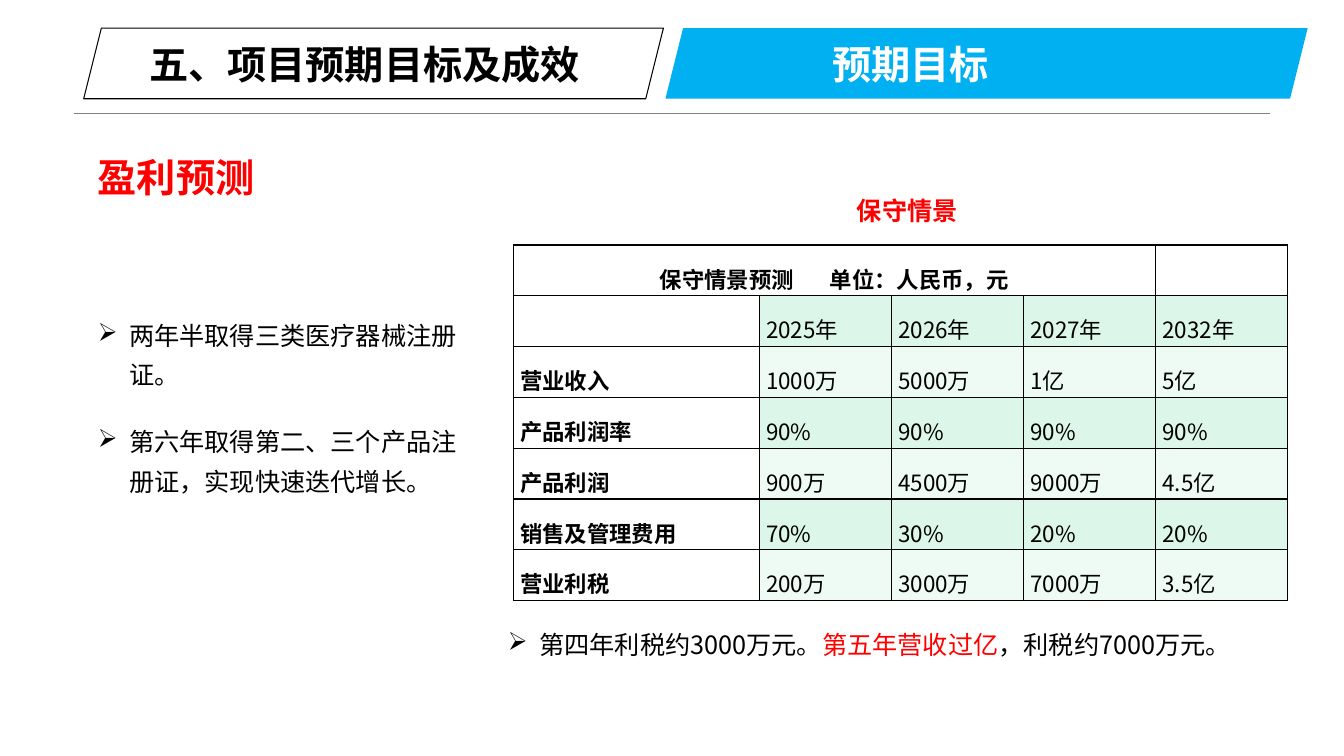
import pptx
import pptx.dml.color
import pptx.enum.shapes
import pptx.enum.text
import pptx.oxml
import pptx.oxml.ns
import pptx.util
from lxml import etree

RGBColor = pptx.dml.color.RGBColor
ALIGN = pptx.enum.text.PP_ALIGN
SHAPE = pptx.enum.shapes.MSO_SHAPE

BLACK = RGBColor(0x00, 0x00, 0x00)
WHITE = RGBColor(0xFF, 0xFF, 0xFF)
RED = RGBColor(0xFF, 0x00, 0x00)
BLUE = RGBColor(0x00, 0xB0, 0xF0)
GRAY = RGBColor(0x80, 0x80, 0x80)
MINT = RGBColor(0xDC, 0xF7, 0xE9)
PALE_MINT = RGBColor(0xEE, 0xFB, 0xF4)

PX = 9144
BODY_FONT = "Noto Sans CJK SC"
TABLE_FONT = "Noto Sans CJK JP"

FORECAST = [
    ("", "2025年", "2026年", "2027年", "2032年"),
    ("营业收入", "1000万", "5000万", "1亿", "5亿"),
    ("产品利润率", "90%", "90%", "90%", "90%"),
    ("产品利润", "900万", "4500万", "9000万", "4.5亿"),
    ("销售及管理费用", "70%", "30%", "20%", "20%"),
    ("营业利税", "200万", "3000万", "7000万", "3.5亿"),
]


def scaled(box):
    return [length * PX for length in box]


def add_run(para, text, size, color, bold=False, font=BODY_FONT):
    span = para.add_run()
    span.text = text
    span.font.size = pptx.util.Pt(size)
    span.font.bold = bold
    span.font.color.rgb = color
    span.font.name = font
    east_asian = etree.SubElement(span.font._element, pptx.oxml.ns.qn("a:ea"))
    east_asian.set("typeface", font)
    return span


def add_arrow_bullet(para):
    properties = para._p.get_or_add_pPr()
    properties.set("marL", str(31 * PX))
    properties.set("indent", str(-31 * PX))
    etree.SubElement(properties, pptx.oxml.ns.qn("a:buChar")).set("char", "➢")


def add_text_area(page, box, inset, wrap=True):
    frame = page.shapes.add_textbox(*scaled(box)).text_frame
    frame.margin_left = frame.margin_right = inset * PX
    frame.margin_top = frame.margin_bottom = 5 * PX
    frame.word_wrap = wrap
    frame.auto_size = pptx.enum.text.MSO_AUTO_SIZE.SHAPE_TO_FIT_TEXT
    return frame


def add_banner(page, box, text, color, fill=None, inset=10):
    banner = page.shapes.add_shape(SHAPE.PARALLELOGRAM, *scaled(box))
    banner.shadow.inherit = False
    banner.adjustments[0] = 0.25
    if fill is None:
        banner.fill.background()
        banner.line.color.rgb = BLACK
        banner.line.width = pptx.util.Pt(0)
    else:
        banner.fill.solid()
        banner.fill.fore_color.rgb = fill
        banner.line.fill.background()
    frame = banner.text_frame
    frame.margin_left = inset * PX
    frame.vertical_anchor = pptx.enum.text.MSO_ANCHOR.MIDDLE
    para = frame.paragraphs[0]
    para.alignment = ALIGN.LEFT
    add_run(para, text, 28, color, bold=True)


def add_header(page, box):
    left, top, width, height = box
    first, gap = 575, 2
    second = width - first - gap
    add_banner(page, (left, top, first, height), "五、项目预期目标及成效", BLACK)
    add_banner(page, (left + first + gap, top, second, height),
               "预期目标", WHITE, BLUE, 105)
    rule_y = top + height + 14
    rule = page.shapes.add_connector(
        pptx.enum.shapes.MSO_CONNECTOR.STRAIGHT,
        *scaled((left - 10, rule_y, left + 1177, rule_y)))
    rule.line.color.rgb = GRAY
    rule.line.width = pptx.util.Pt(0.25)
    etree.SubElement(rule._element.spPr, pptx.oxml.ns.qn("a:effectLst"))


def add_heading(page, box, text, size, leading, align):
    para = add_text_area(page, box, 3, wrap=False).paragraphs[0]
    para.alignment = align
    para.line_spacing = pptx.util.Pt(leading)
    add_run(para, text, size, RED, bold=True)


def add_bullets(page, box, items, inset, space_before=0):
    frame = add_text_area(page, box, inset)
    for index, item in enumerate(items):
        para = frame.add_paragraph() if index else frame.paragraphs[0]
        para.alignment = ALIGN.JUSTIFY
        para.line_spacing = pptx.util.Pt(28)
        para.space_before = pptx.util.Pt(space_before)
        add_arrow_bullet(para)
        for text, color in item:
            add_run(para, text, 18, color)


def style_cell(cell, fill):
    cell.fill.solid()
    cell.fill.fore_color.rgb = fill
    cell.margin_left = cell.margin_right = 7 * PX
    cell.margin_top = cell.margin_bottom = 0
    cell.vertical_anchor = pptx.enum.text.MSO_ANCHOR.MIDDLE
    properties = cell._tc.get_or_add_tcPr()
    for position, side in enumerate(("lnL", "lnR", "lnT", "lnB")):
        properties.insert(position, pptx.oxml.parse_xml(
            f'<a:{side} {pptx.oxml.ns.nsdecls("a")} w="12700"><a:solidFill>'
            f'<a:srgbClr val="{BLACK}"/></a:solidFill></a:{side}>'))


def add_forecast_table(page, box):
    left, top, width, height = box
    row_count, column_count = len(FORECAST) + 1, len(FORECAST[0])
    table = page.shapes.add_table(row_count, column_count, *scaled(box)).table
    table.first_row = table.horz_banding = False
    label_width = 244
    for index, column in enumerate(table.columns):
        value_width = (width - label_width) // (column_count - 1)
        column.width = (value_width if index else label_width) * PX
    for row in table.rows:
        row.height = height * PX // row_count
    for cell in table.rows[0].cells:
        style_cell(cell, WHITE)
    title = table.cell(0, 0)
    title.merge(table.cell(0, column_count - 2))
    para = title.text_frame.paragraphs[0]
    para.alignment = ALIGN.CENTER
    para.line_spacing = 1.5
    add_run(para, "保守情景预测", 16, BLACK, True, TABLE_FONT)
    gap = add_run(para, " ", 16, BLACK, True, TABLE_FONT)
    gap.font._element.set("spc", "2200")
    add_run(para, "单位：人民币，元", 16, BLACK, True, TABLE_FONT)
    for row, values in enumerate(FORECAST, 1):
        band = MINT if row % 2 else PALE_MINT
        for column, value in enumerate(values):
            cell = table.cell(row, column)
            style_cell(cell, band if column else WHITE)
            if value:
                para = cell.text_frame.paragraphs[0]
                para.alignment = ALIGN.JUSTIFY
                para.line_spacing = 1.5
                add_run(para, value, 16, BLACK, column == 0, TABLE_FONT)


def build_forecast_page(deck):
    page = deck.slides.add_slide(deck.slide_layouts[6])
    add_header(page, (83, 28, 1214, 70))
    add_bullets(page, (94, 304, 362, 190), [
        [("两年半取得三类医疗器械注册证。", BLACK)],
        [("第六年取得第二、三个产品注册证，实现快速迭代增长。", BLACK)],
    ], inset=3, space_before=20)
    add_heading(page, (94, 154, 163, 48), "盈利预测", 28, 29, ALIGN.LEFT)
    add_heading(page, (847, 187, 106, 40), "保守情景", 18, 23, ALIGN.CENTER)
    add_forecast_table(page, (509, 243, 768, 353))
    add_bullets(page, (494, 611, 777, 44), [
        [("第四年利税约3000万元。", BLACK), ("第五年营收过亿", RED),
         ("，利税约7000万元。", BLACK)],
    ], inset=10)


def main():
    deck = pptx.Presentation()
    deck.slide_width, deck.slide_height = scaled((1333, 750))
    build_forecast_page(deck)
    deck.save("out.pptx")


if __name__ == "__main__":
    main()
